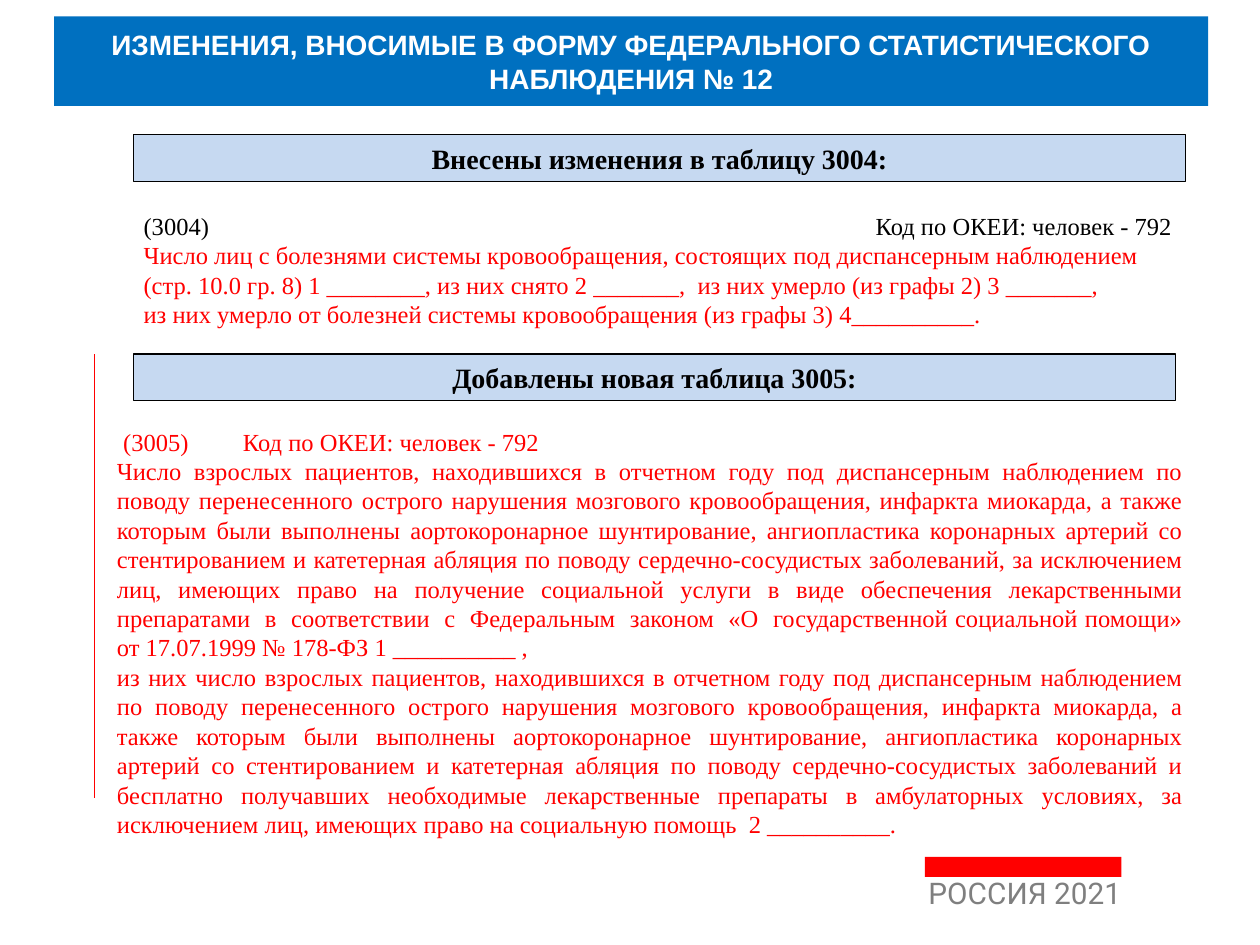
from lxml.etree import SubElement
from pptx import Presentation
from pptx.dml.color import RGBColor
from pptx.enum.shapes import MSO_CONNECTOR, MSO_SHAPE
from pptx.enum.text import MSO_ANCHOR, MSO_AUTO_SIZE, PP_ALIGN
from pptx.oxml.ns import qn
from pptx.util import Inches, Pt

BLACK = RGBColor(0x00, 0x00, 0x00)
WHITE = RGBColor(0xFF, 0xFF, 0xFF)
RED = RGBColor(0xFF, 0x00, 0x00)
BLUE = RGBColor(0x00, 0x70, 0xC0)
PALE_BLUE = RGBColor(0xC6, 0xD9, 0xF1)
GRAY = RGBColor(0x7F, 0x7F, 0x7F)
SERIF = "Times New Roman"
UNIT_CODE = "Код по ОКЕИ: человек - 792"

TABLE_3004 = [
    "Число лиц с болезнями системы кровообращения, состоящих под диспансерным наблюдением",
    "(стр. 10.0 гр. 8) 1 ________, из них снято 2 _______,  из них умерло (из графы 2) 3 _______,",
    "из них умерло от болезней системы кровообращения (из графы 3) 4__________.",
]
PATIENTS = (
    "число взрослых пациентов, находившихся в отчетном году под диспансерным наблюдением "
    "по поводу перенесенного острого нарушения мозгового кровообращения, инфаркта миокарда, "
    "а также которым были выполнены аортокоронарное шунтирование, ангиопластика коронарных "
    "артерий со стентированием и катетерная абляция по поводу сердечно-сосудистых заболеваний"
)
TABLE_3005 = [
    PATIENTS.capitalize() + ", за исключением лиц, имеющих право на получение социальной услуги "
    "в виде обеспечения лекарственными препаратами  в  соответствии  с  Федеральным  законом  "
    "«О  государственной социальной помощи» от 17.07.1999 № 178-ФЗ 1 __________ ,",
    "из них " + PATIENTS + " и бесплатно получавших необходимые лекарственные препараты "
    "в амбулаторных условиях, за исключением лиц, имеющих право на социальную помощь  2 __________.",
]


def set_font(paragraph, name, size, color, bold=False):
    """Style a whole paragraph."""
    font = paragraph.font
    font.name, font.size, font.bold = name, Pt(size), bold
    font.color.rgb = color


def add_bar(page, left, top, width, height, fill, outline=None):
    """Add a filled rectangle, optionally outlined."""
    bar = page.shapes.add_shape(
        MSO_SHAPE.RECTANGLE, Inches(left), Inches(top), Inches(width), Inches(height))
    bar.shadow.inherit = False
    bar.fill.solid()
    bar.fill.fore_color.rgb = fill
    if outline is None:
        bar.line.fill.background()
    else:
        bar.line.color.rgb = outline
        bar.line.width = Pt(0.75)
    return bar


def add_heading(bar, text, font_name, color):
    """Put a bold centred heading in a bar."""
    frame = bar.text_frame
    frame.word_wrap = True
    frame.vertical_anchor = MSO_ANCHOR.MIDDLE
    paragraph = frame.paragraphs[0]
    paragraph.text = text
    paragraph.alignment = PP_ALIGN.CENTER
    set_font(paragraph, font_name, 16, color, bold=True)


def add_text_box(page, left, top, width, height):
    """Add a wrapping text box and return its frame."""
    box = page.shapes.add_textbox(Inches(left), Inches(top), Inches(width), Inches(height))
    box.text_frame.word_wrap = True
    return box.text_frame


def add_section(frame, number, code_left, color, lines, alignment, inset):
    """Write the numbered header with its unit code, then the body lines."""
    frame.vertical_anchor = MSO_ANCHOR.MIDDLE
    frame.auto_size = MSO_AUTO_SIZE.SHAPE_TO_FIT_TEXT
    frame.margin_left = Inches(inset)
    header = frame.paragraphs[0]
    header.text = f"({number})\t{UNIT_CODE}"
    set_font(header, SERIF, 14, color)
    properties = header._p.get_or_add_pPr()
    tabs = properties.makeelement(qn("a:tabLst"), {})
    properties.insert_element_before(tabs, "a:defRPr", "a:extLst")
    SubElement(tabs, qn("a:tab"), pos=str(Inches(code_left)), algn="l")
    for line in lines:
        paragraph = frame.add_paragraph()
        paragraph.text = line
        paragraph.alignment = alignment
        set_font(paragraph, SERIF, 14, RED)
    return header


def add_change_mark(page, left, top, bottom):
    """Draw the red vertical line beside the new table."""
    mark = page.shapes.add_connector(
        MSO_CONNECTOR.STRAIGHT, Inches(left), Inches(top), Inches(left), Inches(bottom))
    mark.line.color.rgb = RED
    mark.line.width = Pt(0.75)
    SubElement(mark._element.spPr, qn("a:effectLst"))


def add_footer(page):
    """Add the country and year under a red bar."""
    paragraph = add_text_box(page, 7.27, 6.95, 1.88, 0.47).paragraphs[0]
    paragraph.text = "РОССИЯ 2021"
    paragraph.line_spacing = 0.8
    paragraph.space_before = Pt(3.4)
    set_font(paragraph, "Roboto", 17, GRAY)
    add_bar(page, 7.34, 6.8, 1.56, 0.16, RED)


def main():
    """Build the slide and save it."""
    deck = Presentation()
    deck.slide_width, deck.slide_height = Inches(10), Inches(7.5)
    page = deck.slides.add_slide(deck.slide_layouts[6])
    add_footer(page)
    add_change_mark(page, 0.75, 2.81, 6.33)
    add_heading(
        add_bar(page, 0.43, 0.13, 9.16, 0.71, BLUE),
        "ИЗМЕНЕНИЯ, ВНОСИМЫЕ В ФОРМУ ФЕДЕРАЛЬНОГО СТАТИСТИЧЕСКОГО НАБЛЮДЕНИЯ № 12",
        "Arial", WHITE)
    for top, width, text in (
        (1.07, 8.35, "Внесены изменения в таблицу 3004:"),
        (2.81, 8.27, "Добавлены новая таблица 3005:"),
    ):
        bar = add_bar(page, 1.06, top, width, 0.37, PALE_BLUE, BLACK)
        add_heading(bar, text, SERIF, BLACK)
    add_section(add_text_box(page, 0.75, 1.62, 8.74, 1.04),
                3004, 5.81, BLACK, TABLE_3004, PP_ALIGN.LEFT, 0.39)
    header = add_section(add_text_box(page, 0.83, 3.32, 8.66, 3.4),
                         3005, 5.86, RED, TABLE_3005, PP_ALIGN.JUSTIFY, 0.1)
    header._p.get_or_add_pPr().set("indent", str(Inches(0.05)))
    deck.save("out.pptx")


if __name__ == "__main__":
    main()
